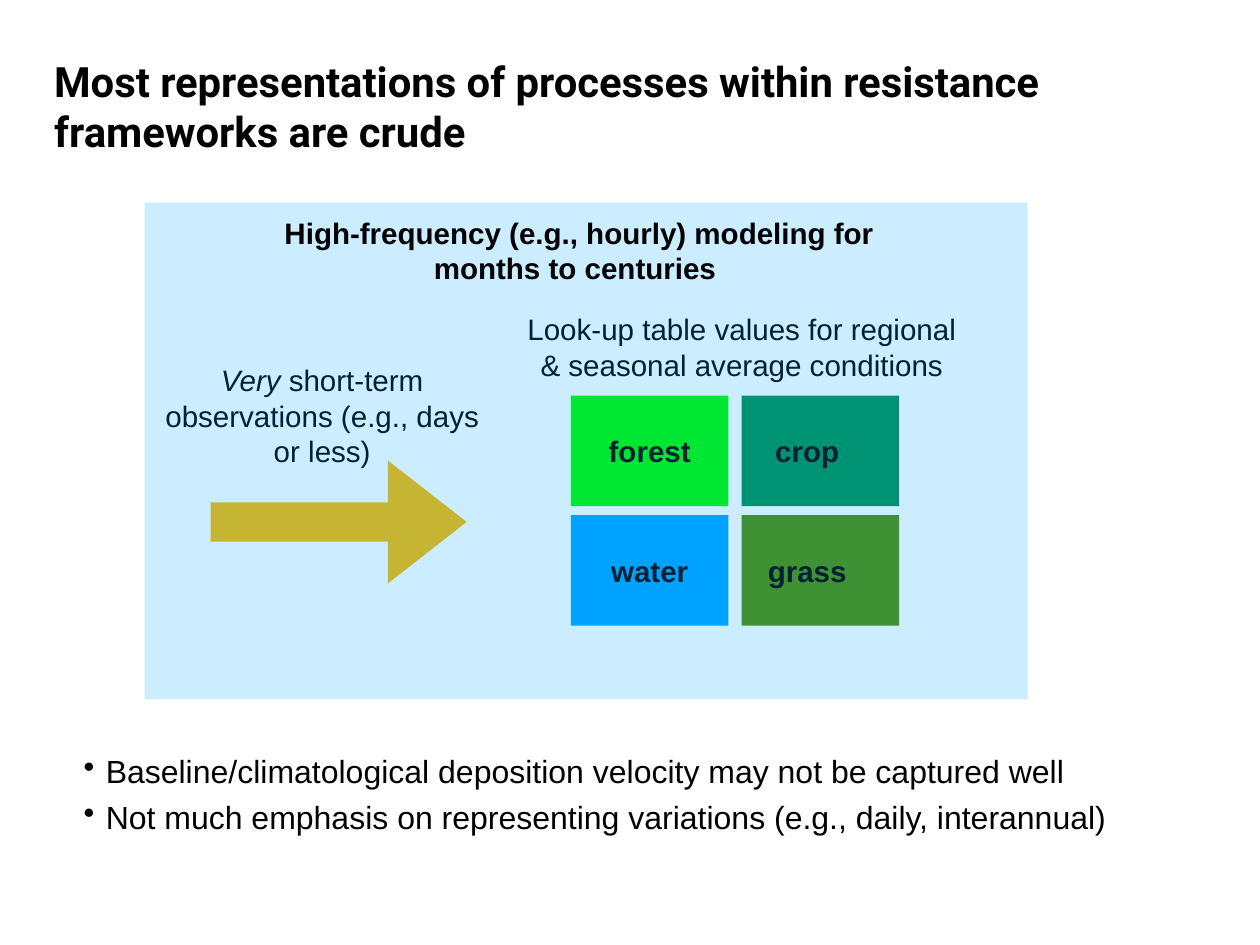
"""Build a slide on how crudely resistance frameworks represent processes."""
from lxml import etree
from pptx import Presentation
from pptx.dml.color import RGBColor
from pptx.enum.shapes import MSO_SHAPE
from pptx.enum.text import MSO_ANCHOR, PP_ALIGN
from pptx.oxml.ns import qn
from pptx.util import Inches, Pt

THEME = {
    "text": "000000", "forest": "00F900", "crop": "009051", "water": "00A2FF",
    "grass": "4F8F00", "arrow": "F7BA01", "panel": "00A2FF",
    "body_font": "Arial", "title_font": "Roboto",
    "title_size": 34, "bullet_size": 26, "label_size": 24,
}
COLUMNS, ROWS = 128, 96

deck = Presentation()
deck.slide_width, deck.slide_height = Inches(14.22), Inches(10.67)
cell = deck.slide_width / COLUMNS
slide = deck.slides.add_slide(deck.slide_layouts[6])


def add_block(preset, place, color):
    """Add a plain filled shape at a (column, row, columns, rows) place."""
    block = slide.shapes.add_shape(preset, *(round(n * cell) for n in place))
    block.shadow.inherit = False
    block.fill.solid()
    block.fill.fore_color.rgb = RGBColor.from_string(THEME[color])
    block.line.fill.background()
    return block


def add_words(place, paragraphs, size="label_size", font="body_font",
              align=PP_ALIGN.CENTER, bold=False, wrap=True):
    """Add a text box whose paragraphs are lists of (text, italic) runs."""
    frame = slide.shapes.add_textbox(*(round(n * cell) for n in place)).text_frame
    layout = {"word_wrap": wrap, "vertical_anchor": MSO_ANCHOR.MIDDLE}
    layout.update({f"margin_{side}": round(cell / 2)
                   for side in ("left", "right", "top", "bottom")})
    for name, value in layout.items():
        setattr(frame, name, value)
    for index, runs in enumerate(paragraphs):
        paragraph = frame.add_paragraph() if index else frame.paragraphs[0]
        paragraph.alignment = align
        for text, italic in runs:
            run = paragraph.add_run()
            run.text = text
            style = {"name": THEME[font], "size": Pt(THEME[size]),
                     "bold": bold, "italic": italic}
            for name, value in style.items():
                setattr(run.font, name, value)
            run.font.color.rgb = RGBColor.from_string(THEME["text"])
    return frame


findings = add_words(
    (8, 75.4, 114.75, 9.7),
    [[("Baseline/climatological deposition velocity may not be captured well", False)],
     [("Not much emphasis on representing variations (e.g., daily, interannual)", False)]],
    size="bullet_size", align=PP_ALIGN.LEFT)
for finding in findings.paragraphs:
    finding.line_spacing = 1.2
    properties = finding._p.get_or_add_pPr()
    properties.set("marL", str(Inches(0.25)))
    properties.set("indent", str(-Inches(0.25)))
    etree.SubElement(properties, qn("a:buChar")).set("char", "•")

land_covers = [("forest", 9.45), ("crop", 7.65), ("water", 9.25), ("grass", 9.1)]
for index, (cover, label_width) in enumerate(land_covers):
    row, column = divmod(index, 2)
    top = 40.2 + 12.15 * row
    add_block(MSO_SHAPE.RECTANGLE, (58 + 17.35 * column, top, 16, 11.25), cover)
    add_words((66 + 16 * column - label_width / 2, top + 3.4, label_width, 4.5),
              [[(cover, False)]], bold=True, wrap=False)

arrow = add_block(MSO_SHAPE.RIGHT_ARROW, (21.4, 46.8, 26, 12.5), "arrow")
arrow.adjustments[0], arrow.adjustments[1] = 0.32, 0.64
add_words((15.4, 36.3, 34.65, 11.8),
          [[("Very", True), (" short-term observations (e.g., days or less)", False)]])
add_words((52.5, 31.15, 45.7, 8.2),
          [[("Look-up table values for regional & seasonal average conditions", False)]])

panel = add_block(MSO_SHAPE.RECTANGLE, (14.7, 20.6, 89.7, 50.5), "panel")
tint = panel.fill._xPr.find(qn("a:solidFill"))[0]
etree.SubElement(tint, qn("a:alpha")).set("val", "20000")
add_words((22.6, 21.35, 72.45, 8.2),
          [[("High-frequency (e.g., hourly) modeling for months to centuries ", False)]],
          bold=True)

add_words((5, 5.15, 120.85, 11.25),
          [[("Most representations of processes within resistance frameworks are crude",
             False)]],
          size="title_size", font="title_font", align=PP_ALIGN.LEFT, bold=True)

deck.save("out.pptx")
